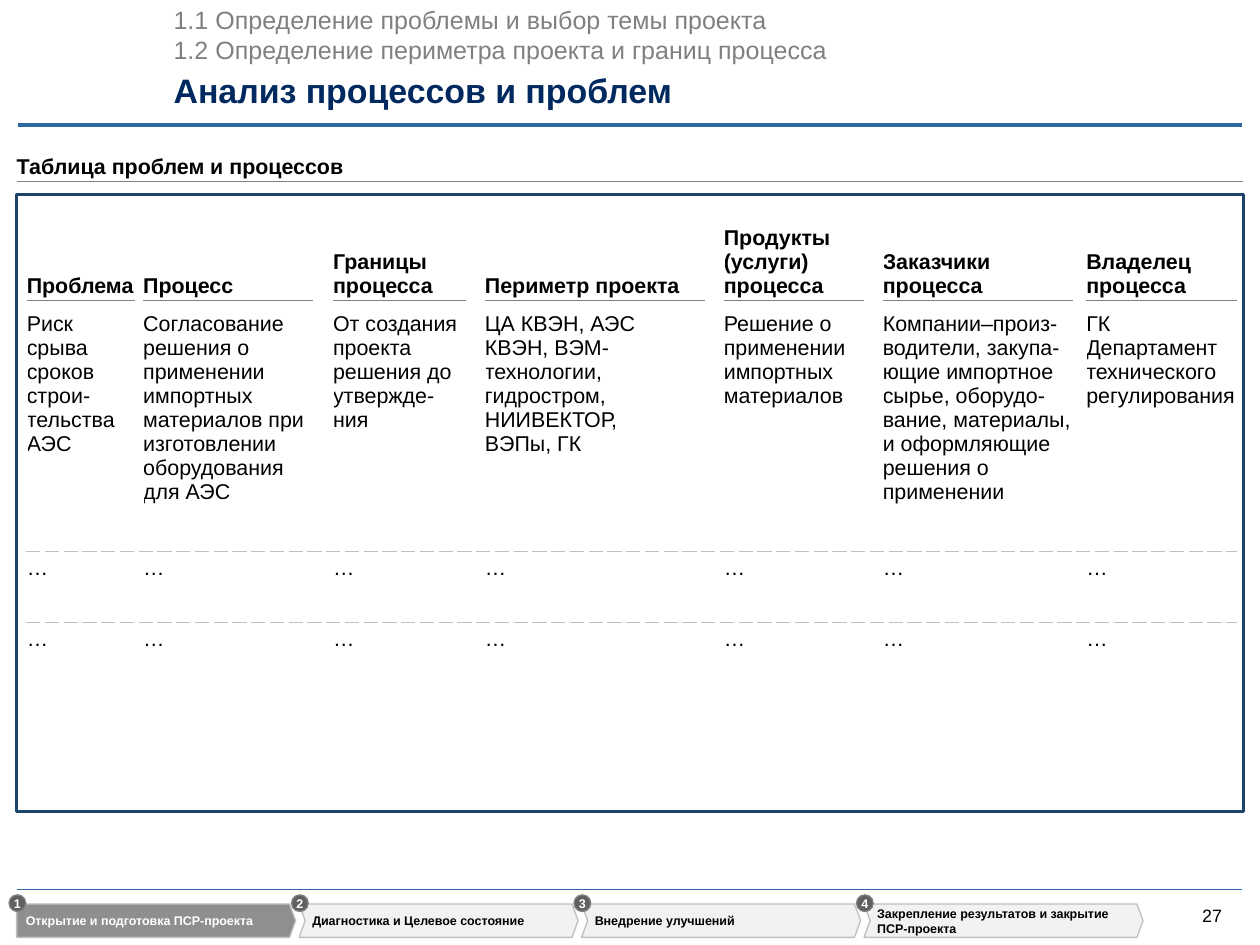
from lxml import etree
from pptx import Presentation
from pptx.dml.color import RGBColor
from pptx.enum.shapes import MSO_CONNECTOR, MSO_SHAPE
from pptx.enum.text import MSO_ANCHOR, PP_ALIGN
from pptx.oxml.ns import qn
from pptx.util import Cm, Pt

TOP, MIDDLE, BOTTOM = MSO_ANCHOR.TOP, MSO_ANCHOR.MIDDLE, MSO_ANCHOR.BOTTOM
LEFT, CENTER = PP_ALIGN.LEFT, PP_ALIGN.CENTER
STRAIGHT, RECT, OVAL = MSO_CONNECTOR.STRAIGHT, MSO_SHAPE.RECTANGLE, MSO_SHAPE.OVAL

COLORS = {
    "text": "000000", "white": "FFFFFF", "title": "002960", "rule": "2E69A5",
    "grey": "808080", "frame": "1C436A", "light": "BFBFBF", "step": "F2F2F2",
    "active": "8F8F8F", "badge": "606060",
}
FONT = "Arial"

# Content, lengths in cm
TOPICS = [
    "1.1 Определение проблемы и выбор темы проекта",
    "1.2 Определение периметра проекта и границ процесса",
]
TITLE = "Анализ процессов и проблем"
SECTION = "Таблица проблем и процессов"
PAGE = "27"
COLUMNS = [  # left, width, heading, first entry
    (0.53, 2.13, "Проблема", "Риск срыва сроков строи-тельства АЭС"),
    (2.83, 3.35, "Процесс",
     "Согласование решения о применении импортных материалов при "
     "изготовлении оборудования для АЭС"),
    (6.58, 2.62, "Границы процесса",
     "От создания проекта решения до утвержде-ния"),
    (9.58, 4.34, "Периметр проекта",
     "ЦА КВЭН, АЭС КВЭН, ВЭМ-технологии, гидростром, НИИВЕКТОР,\nВЭПы, ГК"),
    (14.3, 2.77, "Продукты (услуги) процесса",
     "Решение о применении импортных материалов"),
    (17.44, 3.76, "Заказчики процесса",
     "Компании–произ-водители, закупа-ющие импортное сырье, оборудо-вание, "
     "материалы, и оформляющие решения о применении"),
    (21.46, 2.97, "Владелец процесса",
     "ГК Департамент технического регулирования"),
]
ROWS = [  # height, top margin, bottom margin, anchor
    (1.6, 0, 0.05, BOTTOM),
    (4.96, 0.23, 0, TOP),
    (1.4, 0.08, 0, TOP),
    (1.4, 0.08, 0, TOP),
]
TABLE_TOP = 4.34
DASHED_BELOW = (1, 2)
STEPS = [
    "Открытие и подготовка ПСР-проекта",
    "Диагностика и Целевое состояние",
    "Внедрение улучшений",
    "Закрепление результатов и закрытие ПСР-проекта",
]
ACTIVE_STEP = 0
STEP_LEFT, STEP_TOP, STEP_PITCH = 0.33, 17.86, 5.58
STEP_W, STEP_H, STEP_TIP = 5.51, 0.66, 0.12
BADGE = 0.33


def rgb(name):
    return RGBColor.from_string(COLORS[name])


def write(tf, lines, size, color="text", bold=False, align=LEFT):
    """One paragraph per line; a newline inside a line becomes a line break."""
    for i, line in enumerate(lines):
        p = tf.paragraphs[0] if i == 0 else tf.add_paragraph()
        p.alignment = align
        for j, part in enumerate(line.split("\n")):
            if j:
                p.add_line_break()
            r = p.add_run()
            r.text = part
            r.font.name, r.font.size, r.font.bold = FONT, Pt(size), bold
            r.font.color.rgb = rgb(color)


def set_frame(tf, anchor, left=0, right=0, wrap=True):
    tf.word_wrap, tf.vertical_anchor = wrap, anchor
    tf.margin_left, tf.margin_right = Cm(left), Cm(right)
    tf.margin_top = tf.margin_bottom = 0


def add_text(s, box, lines, size, anchor=TOP, wrap=True, **style):
    tf = s.shapes.add_textbox(*map(Cm, box)).text_frame
    set_frame(tf, anchor, wrap=wrap)
    write(tf, lines, size, **style)


def add_rule(s, x1, x2, y, color, width=0.75):
    line = s.shapes.add_connector(STRAIGHT, Cm(x1), Cm(y), Cm(x2), Cm(y))
    line.line.color.rgb, line.line.width = rgb(color), Pt(width)
    etree.SubElement(line._element.spPr, qn("a:effectLst"))


def paint(sp, fill, line, width=0.75):
    sp.shadow.inherit = False
    if fill:
        sp.fill.solid()
        sp.fill.fore_color.rgb = rgb(fill)
    else:
        sp.fill.background()
    sp.line.color.rgb, sp.line.width = rgb(line), Pt(width)


def dash_border(cell, side):
    ln = etree.Element(qn("a:" + side), w=str(Pt(0.75)))
    fill = etree.SubElement(ln, qn("a:solidFill"))
    etree.SubElement(fill, qn("a:srgbClr"), val=COLORS["light"])
    etree.SubElement(ln, qn("a:prstDash"), val="dash")
    cell._tc.get_or_add_tcPr().insert(0, ln)


def add_problem_table(s):
    lefts = [c[0] for c in COLUMNS]
    right = lefts[-1] + COLUMNS[-1][1]
    pitches = [b - a for a, b in zip(lefts, lefts[1:] + [right])]
    height = sum(row[0] for row in ROWS)
    table = s.shapes.add_table(
        len(ROWS), len(COLUMNS), Cm(lefts[0]), Cm(TABLE_TOP),
        Cm(right - lefts[0]), Cm(height)).table
    table.first_row = table.horz_banding = False
    for i, (row_h, top, bottom, anchor) in enumerate(ROWS):
        table.rows[i].height = Cm(row_h)
        for j, (left, width, heading, entry) in enumerate(COLUMNS):
            table.columns[j].width = Cm(pitches[j])
            cell = table.cell(i, j)
            cell.margin_left, cell.margin_top = 0, Cm(top)
            cell.margin_right = Cm(max(0, pitches[j] - width))
            cell.margin_bottom = Cm(bottom)
            cell.vertical_anchor = anchor
            cell.fill.background()
            if i in DASHED_BELOW:
                dash_border(cell, "lnB")
            if i - 1 in DASHED_BELOW:
                dash_border(cell, "lnT")
            text = (heading, entry, "…", "…")[i]
            write(cell.text_frame, [text], 12, bold=i == 0)
    for left, width, *_ in COLUMNS:
        add_rule(s, left, left + width, TABLE_TOP + ROWS[0][0], "grey")


def add_step(s, i, label):
    """Arrow-shaped progress step with its numbered badge."""
    active = i == ACTIVE_STEP
    x, mid = STEP_LEFT + i * STEP_PITCH, STEP_TOP + STEP_H / 2
    bottom, tip = STEP_TOP + STEP_H, x + STEP_W
    notch = x if i == 0 else x + STEP_TIP
    points = [(tip - STEP_TIP, STEP_TOP), (tip, mid), (tip - STEP_TIP, bottom),
              (x, bottom), (notch, mid)]
    fb = s.shapes.build_freeform(Cm(x), Cm(STEP_TOP))
    fb.add_line_segments([(Cm(a), Cm(b)) for a, b in points], close=True)
    sp = fb.convert_to_shape()
    paint(sp, "active" if active else "step", "light")
    set_frame(sp.text_frame, MIDDLE, left=0.18 if i == 0 else 0.26, right=STEP_TIP)
    write(sp.text_frame, [label], 7, "white" if active else "text", bold=True)

    badge = s.shapes.add_shape(OVAL, Cm(x - 0.15), Cm(STEP_TOP - 0.18),
                               Cm(BADGE), Cm(BADGE))
    paint(badge, "badge", "grey")
    set_frame(badge.text_frame, MIDDLE, wrap=False)
    write(badge.text_frame, [str(i + 1)], 7, "white", bold=True, align=CENTER)


def main():
    prs = Presentation()
    prs.slide_width, prs.slide_height = Cm(24.89), Cm(18.67)
    s = prs.slides.add_slide(prs.slide_layouts[6])

    add_text(s, (3.43, 0.08, 12.98, 1.19), TOPICS, 14, wrap=False, color="grey")
    add_text(s, (3.43, 1.37, 18.57, 0.81), [TITLE], 19, MIDDLE,
             color="title", bold=True)
    add_rule(s, 0.36, 24.54, 2.46, "rule", 2.25)
    add_text(s, (0.33, 3.02, 24.23, 0.51), [SECTION], 12, BOTTOM, bold=True)
    add_rule(s, 0.33, 24.56, 3.58, "grey")

    frame = s.shapes.add_shape(RECT, Cm(0.33), Cm(3.84), Cm(24.23), Cm(12.19))
    paint(frame, None, "frame", 1.5)
    add_problem_table(s)

    add_rule(s, 0.33, 24.54, 17.58, "rule")
    for i, label in enumerate(STEPS):
        add_step(s, i, label)
    add_text(s, (23.75, 17.88, 0.58, 0.43), [PAGE], 10, MIDDLE, wrap=False)
    prs.save("out.pptx")


if __name__ == "__main__":
    main()
